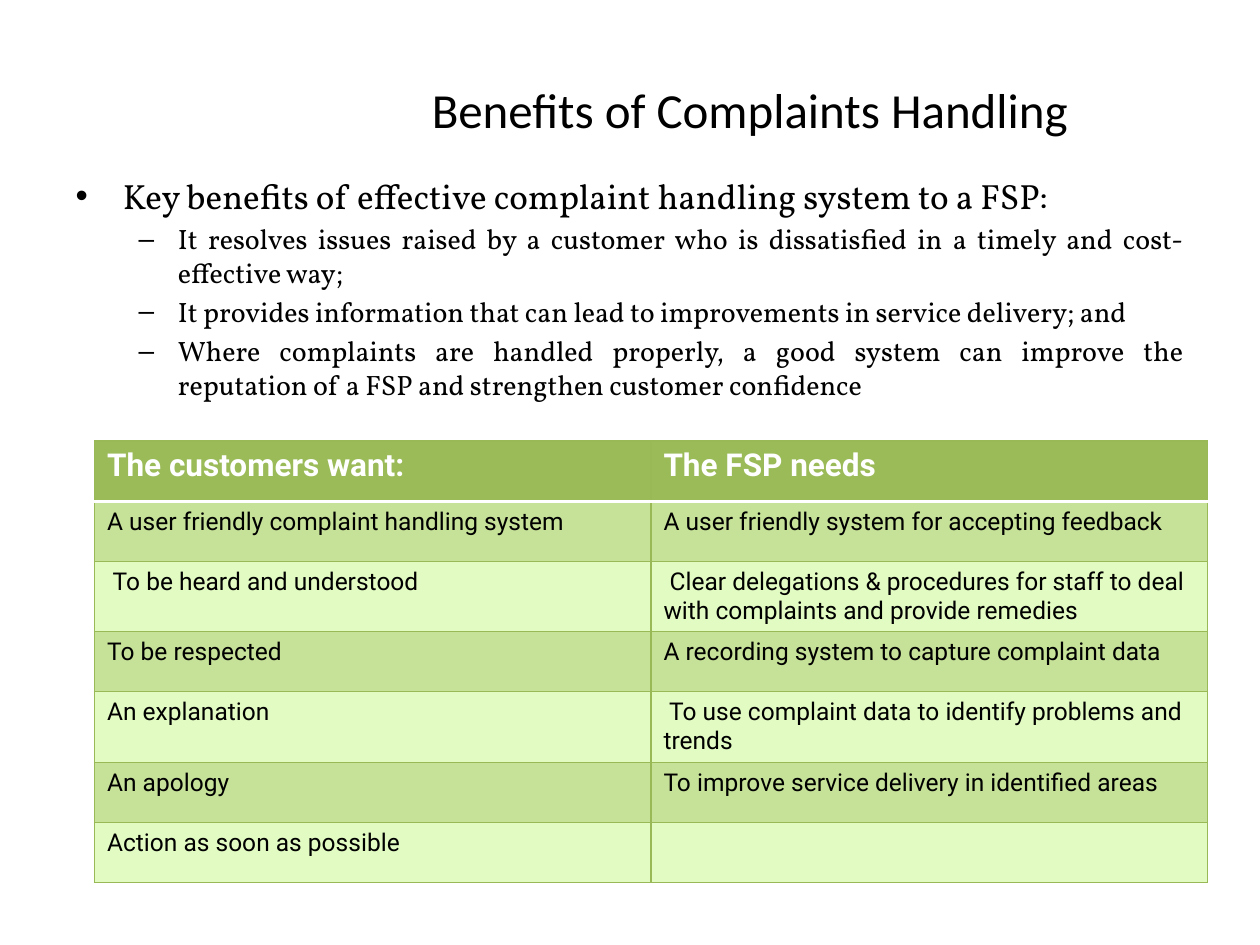
from typing import NamedTuple

import pptx
import pptx.dml.color
import pptx.enum.text
import pptx.oxml
import pptx.oxml.ns
import pptx.util

COLS, ROWS = 40, 30  # grid of the slide
COLORS = {
    "text": "000000",
    "header_text": "FFFFFF",
    "header": "9BBB59",
    "dark_row": "C6E198",
    "light_row": "E2FBC2",
    "border": "98B955",
    "header_rule": "FFFFFF",
}


class Area(NamedTuple):
    """A rectangle in grid columns and rows."""
    col: float
    row: float
    cols: float
    rows: float


class Style(NamedTuple):
    font: str
    size: float
    color: str
    bold: bool = False


class Item(NamedTuple):
    text: str
    level: int


TITLE = Area(2, 1, 36, 4.33)
BODY = Area(2, 5.33, 36, 21.47)
TABLE = Area(3, 14, 35.33, 13.35)

TITLE_STYLE = Style("Calibri", 28, "text")
BODY_STYLES = [Style("Vollkorn", 20, "text"), Style("Vollkorn", 16, "text")]
HEADER_STYLE = Style("Roboto", 18, "header_text", True)
CELL_STYLE = Style("Roboto", 14, "text")

ITEMS = [
    Item("Key benefits of effective complaint handling system to a FSP:", 0),
    Item("It resolves issues raised by a customer who is dissatisfied in a timely and "
         "cost-effective way;", 1),
    Item("It provides information that can lead to improvements in service delivery; and", 1),
    Item("Where complaints are handled properly, a good system can improve the "
         "reputation of a FSP and strengthen customer confidence", 1),
]
NEEDS = [
    ("The customers want:", "The FSP needs"),
    ("A user friendly complaint handling system",
     "A user friendly system for accepting feedback"),
    (" To be heard and understood",
     " Clear delegations & procedures for staff to deal with complaints and provide remedies"),
    ("To be respected", "A recording system to capture complaint data"),
    ("An explanation", " To use complaint data to identify problems and\ntrends"),
    ("An apology", "To improve service delivery in identified areas"),
    ("Action as soon as possible", ""),
]


def rgb(name: str) -> pptx.dml.color.RGBColor:
    return pptx.dml.color.RGBColor.from_string(COLORS[name])


def box(prs, area: Area) -> tuple[int, int, int, int]:
    """Left, top, width and height of a grid area."""
    x, y = prs.slide_width / COLS, prs.slide_height / ROWS
    return (round(area.col * x), round(area.row * y),
            round(area.cols * x), round(area.rows * y))


def place(prs, sp, area: Area) -> None:
    sp.left, sp.top, sp.width, sp.height = box(prs, area)


def add_run(p, text: str, style: Style) -> None:
    r = p.add_run()
    r.text = text
    r.font.name = style.font
    r.font.size = pptx.util.Pt(style.size)
    r.font.bold = style.bold
    r.font.color.rgb = rgb(style.color)


def add_title(prs, s) -> None:
    sp = s.shapes.title
    place(prs, sp, TITLE)
    tf = sp.text_frame
    tf.auto_size = pptx.enum.text.MSO_AUTO_SIZE.NONE
    tf.vertical_anchor = pptx.enum.text.MSO_ANCHOR.MIDDLE
    tf.margin_left = pptx.util.Inches(2)
    tf.margin_top = pptx.util.Inches(0.2)
    p = tf.paragraphs[0]
    p.alignment = pptx.enum.text.PP_ALIGN.CENTER
    add_run(p, "Benefits of Complaints Handling", TITLE_STYLE)


def add_body(prs, s) -> None:
    sp = s.placeholders[1]
    place(prs, sp, BODY)
    tf = sp.text_frame
    tf.auto_size = pptx.enum.text.MSO_AUTO_SIZE.NONE
    for i, item in enumerate(ITEMS):
        p = tf.add_paragraph() if i else tf.paragraphs[0]
        style = BODY_STYLES[item.level]
        p.level = item.level
        p.alignment = pptx.enum.text.PP_ALIGN.JUSTIFY
        p.space_before = pptx.util.Pt(0.2 * style.size if i else 0)
        add_run(p, item.text, style)


def set_borders(cell, top: tuple[str, float], bottom: tuple[str, float]) -> None:
    side = ("border", 0.75)
    tc_pr = cell._tc.get_or_add_tcPr()
    edges = {"lnL": side, "lnR": side, "lnT": top, "lnB": bottom}
    for i, (tag, (color, width)) in enumerate(edges.items()):
        tc_pr.insert(i, pptx.oxml.parse_xml(
            f'<a:{tag} {pptx.oxml.ns.nsdecls("a")} w="{pptx.util.Pt(width)}">'
            f'<a:solidFill><a:srgbClr val="{COLORS[color]}"/></a:solidFill></a:{tag}>'))


def fill_cell(cell, row: int, text: str) -> None:
    fill = "header" if row == 0 else ("light_row", "dark_row")[row % 2]
    cell.fill.solid()
    cell.fill.fore_color.rgb = rgb(fill)
    line, rule = ("border", 0.75), ("header_rule", 2)
    set_borders(cell, rule if row == 1 else line, rule if row == 0 else line)
    tf = cell.text_frame
    style = CELL_STYLE if row else HEADER_STYLE
    for i, part in enumerate(text.split("\n")):
        p = tf.add_paragraph() if i else tf.paragraphs[0]
        p.font.size = pptx.util.Pt(style.size)
        if part:
            add_run(p, part, style)


def add_needs_table(prs, s) -> None:
    table = s.shapes.add_table(len(NEEDS), len(NEEDS[0]), *box(prs, TABLE)).table
    for row, texts in enumerate(NEEDS):
        for col, text in enumerate(texts):
            fill_cell(table.cell(row, col), row, text)


def main() -> None:
    prs = pptx.Presentation()
    prs.slide_width = pptx.util.Inches(10)
    prs.slide_height = pptx.util.Inches(7.5)
    s = prs.slides.add_slide(prs.slide_layouts[1])
    add_title(prs, s)
    add_body(prs, s)
    add_needs_table(prs, s)
    prs.save("out.pptx")


if __name__ == "__main__":
    main()
